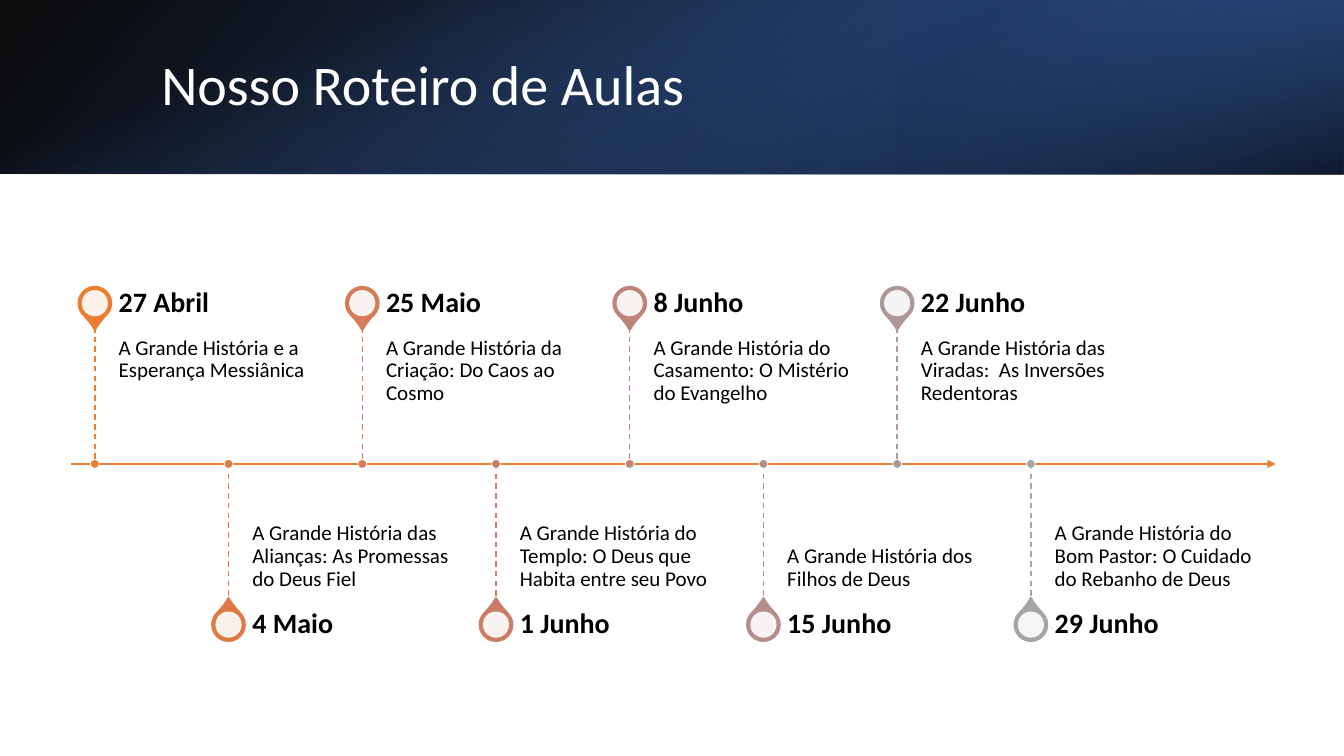
from pptx import Presentation
from pptx.dml.color import RGBColor
from pptx.enum.dml import MSO_LINE
from pptx.enum.shapes import MSO_CONNECTOR, MSO_SHAPE
from pptx.enum.text import MSO_ANCHOR as Anchor, MSO_AUTO_SIZE as AutoSize, PP_ALIGN
from pptx.oxml.ns import qn
from pptx.util import Cm, Pt
from lxml.etree import SubElement

# Content
TITLE = "Nosso Roteiro de Aulas"
LESSONS = [
    ("27 Abril", "A Grande História e a Esperança Messiânica", "ED7D31"),
    ("4 Maio", "A Grande História das Alianças: As Promessas do Deus Fiel", "E07A44"),
    ("25 Maio", "A Grande História da Criação: Do Caos ao Cosmo", "D57B56"),
    ("1 Junho", "A Grande História do Templo: O Deus que Habita entre seu Povo", "CA7E67"),
    ("8 Junho", "A Grande História do Casamento: O Mistério do Evangelho", "BF8478"),
    ("15 Junho", "A Grande História dos Filhos de Deus", "B68D88"),
    ("22 Junho", "A Grande História das Viradas:  As Inversões Redentoras", "AD9897"),
    ("29 Junho", "A Grande História do Bom Pastor: O Cuidado do Rebanho de Deus", "A5A5A5"),
]
# Banner layers: left, top, width, height, rotation, mirrored, angle,
# stops as (position, colour, opacity %)
BANNER = [
    (0, 0, 33.87, 4.38, 0, True, 140, [(0, "000000", 96), (1, "2F5597", 100)]),
    (22.58, 0, 11.29, 4.38, 180, True, 320, [(0.19, "203864", 68), (0.99, "4472C4", 79)]),
    (14.74, -14.74, 4.38, 33.87, 90, False, 340, [(0.23, "4472C4", 0), (0.99, "000000", 74)]),
]

# Timeline measures, in cm
AXIS_Y, AXIS_LEFT, AXIS_RIGHT = 11.69, 1.79, 32.15
FIRST_X, PITCH = 2.39, 3.37
STEM, PIN_OFFSET = 3.45, 4.05
PIN, HOLE, DOT = 0.84, 0.66, 0.22
TEXT_GAP, TEXT_WIDTH, DATE_HEIGHT = 0.6, 5.57, 1.22

presentation = Presentation()
presentation.slide_width, presentation.slide_height = Cm(33.87), Cm(19.05)
slide = presentation.slides.add_slide(presentation.slide_layouts[5])
shapes = slide.shapes


def color(value):
    return RGBColor.from_string(value)


def set_opacity(color_element, percent):
    SubElement(color_element, qn("a:alpha")).set("val", str(percent * 1000))


def add_banner_layer(left, top, width, height, rotation, mirrored, angle, stops):
    layer = shapes.add_shape(MSO_SHAPE.RECTANGLE, Cm(left), Cm(top), Cm(width), Cm(height))
    layer.shadow.inherit = False
    layer.line.fill.background()
    layer.rotation = rotation
    if mirrored:
        layer._element.spPr.find(qn("a:xfrm")).set("flipH", "1")
    layer.fill.gradient()
    layer.fill.gradient_angle = 360 - angle
    for stop, (position, value, _) in zip(layer.fill.gradient_stops, stops):
        stop.position = position
        stop.color.rgb = color(value)
    for element, (_, _, opacity) in zip(layer._element.spPr.iter(qn("a:srgbClr")), stops):
        set_opacity(element, opacity)


def add_marker(kind, x, y, size, fill, outline=None, weight=1):
    """Add a small shape centred on (x, y)."""
    marker = shapes.add_shape(kind, Cm(x - size / 2), Cm(y - size / 2), Cm(size), Cm(size))
    marker.shadow.inherit = False
    marker.fill.solid()
    marker.fill.fore_color.rgb = color(fill)
    if outline:
        marker.line.color.rgb = color(outline)
        marker.line.width = Pt(weight)
    else:
        marker.line.fill.background()
    return marker


def add_line(x1, y1, x2, y2, value, weight):
    connector = shapes.add_connector(MSO_CONNECTOR.STRAIGHT, Cm(x1), Cm(y1), Cm(x2), Cm(y2))
    connector.line.color.rgb = color(value)
    connector.line.width = Pt(weight)
    SubElement(connector._element.spPr, qn("a:effectLst"))
    return connector


def write(frame, text, size, value, anchor, bold=False):
    frame.word_wrap = True
    frame.auto_size = AutoSize.NONE
    frame.vertical_anchor = anchor
    paragraph = frame.paragraphs[0]
    paragraph.alignment = PP_ALIGN.LEFT
    paragraph.line_spacing = 0.9
    run = paragraph.add_run()
    run.text = text
    run.font.name, run.font.size, run.font.bold = "Calibri", Pt(size), bold
    run.font.color.rgb = color(value)


def add_text(x, y, height, insets, *style, **options):
    frame = shapes.add_textbox(Cm(x), Cm(y), Cm(TEXT_WIDTH), Cm(height)).text_frame
    frame.margin_left = 0
    frame.margin_top, frame.margin_right, frame.margin_bottom = map(Cm, insets)
    write(frame, *style, **options)


def add_lesson(index, date, topic, value):
    x = FIRST_X + index * PITCH
    above = index % 2 == 0
    side = -1 if above else 1
    pin_y = AXIS_Y + side * PIN_OFFSET

    # Pin pointing at the axis
    pin = add_marker(MSO_SHAPE.TEAR, x, pin_y, PIN, value, value)
    pin.adjustments[0] = 1.15
    pin.rotation = 135 if above else 315
    hole = add_marker(MSO_SHAPE.OVAL, x, pin_y, HOLE, "FFFFFF")
    set_opacity(hole._element.spPr.find(".//" + qn("a:srgbClr")), 90)

    # Topic and date
    text_x = x + TEXT_GAP
    topic_y = AXIS_Y - STEM if above else AXIS_Y
    insets = (0.25, 0.25, 0.41) if above else (0.41, 0, 0.25)
    add_text(text_x, topic_y, STEM, insets, topic, 15, "000000",
             Anchor.TOP if above else Anchor.BOTTOM)
    add_text(text_x, pin_y - DATE_HEIGHT / 2, DATE_HEIGHT, (0, 0.36, 0),
             date, 20, "000000", Anchor.MIDDLE, bold=True)

    # Stem and dot on the axis
    stem = add_line(x, topic_y, x, topic_y + STEM, value, 1)
    stem.line.dash_style = MSO_LINE.DASH
    add_marker(MSO_SHAPE.OVAL, x, AXIS_Y, DOT, value, "FFFFFF", 0.5)


# Banner, with the title in front
for banner_layer in BANNER:
    add_banner_layer(*banner_layer)
title = shapes.title
title.left, title.top, title.width, title.height = Cm(3.81), Cm(0.97), Cm(27.89), Cm(2.44)
write(title.text_frame, TITLE, 40, "FFFFFF", Anchor.MIDDLE)
shapes._spTree.append(title._element)

# Timeline
axis = add_line(AXIS_LEFT, AXIS_Y, AXIS_RIGHT, AXIS_Y, "ED7D31", 1.5)
SubElement(axis.line._get_or_add_ln(), qn("a:tailEnd")).set("type", "triangle")
for number, lesson in enumerate(LESSONS):
    add_lesson(number, *lesson)

presentation.save("out.pptx")
